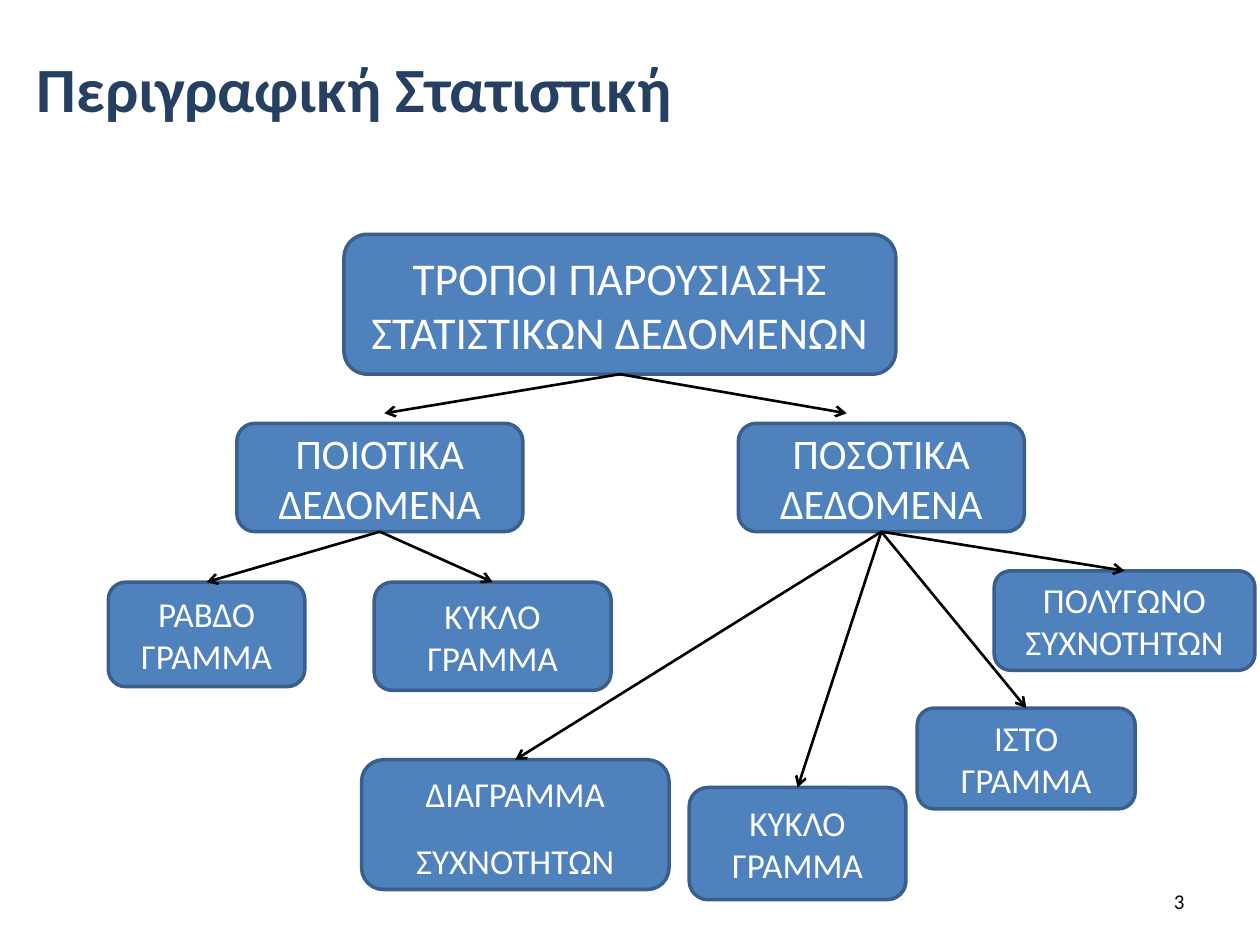
from lxml import etree
from pptx import Presentation
from pptx.dml.color import RGBColor
from pptx.enum.shapes import MSO_CONNECTOR, MSO_SHAPE
from pptx.enum.text import MSO_ANCHOR, MSO_AUTO_SIZE, PP_ALIGN
from pptx.oxml.ns import qn
from pptx.util import Inches, Pt

NODE = MSO_SHAPE.FLOWCHART_ALTERNATE_PROCESS
STRAIGHT = MSO_CONNECTOR.STRAIGHT
MIDDLE = MSO_ANCHOR.MIDDLE
FIXED = MSO_AUTO_SIZE.NONE
LEFT, CENTER, RIGHT = PP_ALIGN.LEFT, PP_ALIGN.CENTER, PP_ALIGN.RIGHT
TOP_SITE, BOTTOM_SITE = 0, 2
FONT = "Calibri"
COLORS = {"node": "4F81BD", "edge": "3A5F8C", "light": "FFFFFF", "dark": "000000", "title": "254061"}
COLUMNS, ROWS = 100, 75


def color(name):
    """Return the named palette colour."""
    return RGBColor.from_string(COLORS[name])


def write(box, text, size=20, ink="light", bold=False, align=CENTER, spacing=1.0, before=0, margin=0, indent=0):
    """Fill a shape with one formatted paragraph per line of text."""
    frame = box.text_frame
    frame.word_wrap = True
    frame.auto_size = FIXED
    frame.vertical_anchor = MIDDLE
    for index, line in enumerate(text.split("\n")):
        para = frame.add_paragraph() if index else frame.paragraphs[0]
        para.alignment = align
        para.line_spacing = spacing
        para.space_before = Pt(before)
        properties = para._p.get_or_add_pPr()
        properties.set("marL", str(Inches(margin)))
        properties.set("indent", str(Inches(indent)))
        etree.SubElement(properties, qn("a:buNone"))
        span = para.add_run()
        span.text = line
        span.font.name = FONT
        span.font.size = Pt(size)
        span.font.bold = bold
        span.font.color.rgb = color(ink)


class TreeSlide:
    """Hold the current page and draw a tree diagram on its grid."""

    def __init__(self, deck):
        """Add a title and content page to the deck."""
        self.deck = deck
        self.page = deck.slides.add_slide(deck.slide_layouts[1])

    def point(self, column, row):
        """Convert grid units to slide lengths."""
        return int(self.deck.slide_width * column / COLUMNS), int(self.deck.slide_height * row / ROWS)

    def place(self, box, area):
        """Move a shape to an area given in columns and rows."""
        box.left, box.top = self.point(*area[:2])
        box.width, box.height = self.point(*area[2:])

    def style(self, box):
        """Apply the node fill and outline."""
        box.fill.solid()
        box.fill.fore_color.rgb = color("node")
        box.line.color.rgb = color("edge")
        box.line.width = Pt(2)

    def title(self, text, area):
        """Fill the title placeholder."""
        box = self.page.shapes.title
        self.place(box, area)
        write(box, text, size=36, ink="title", bold=True, align=LEFT, margin=0.19)

    def node(self, text, area, size=20):
        """Add a rounded node."""
        box = self.page.shapes.add_shape(NODE, *self.point(*area[:2]), *self.point(*area[2:]))
        box.shadow.inherit = False
        self.style(box)
        write(box, text, size=size)
        return box

    def body_node(self, text, area):
        """Turn the body placeholder into a rounded node."""
        box = self.page.placeholders[1]
        self.place(box, area)
        outline = etree.SubElement(box._element.spPr, qn("a:prstGeom"), prst="flowChartAlternateProcess")
        etree.SubElement(outline, qn("a:avLst"))
        self.style(box)
        write(box, text, spacing=1.1, before=12, indent=-0.3)
        return box

    def arrow(self, parent, child=None, tip=(0, 0)):
        """Draw an arrow from a parent's foot to a child's top or a free tip."""
        end = self.point(*tip)
        line = self.page.shapes.add_connector(STRAIGHT, *end, *end)
        line.begin_connect(parent, BOTTOM_SITE)
        if child is not None:
            line.end_connect(child, TOP_SITE)
        line.line.color.rgb = color("dark")
        line.line.width = Pt(1.5)
        etree.SubElement(line.line._get_or_add_ln(), qn("a:tailEnd"), type="arrow")
        etree.SubElement(line._element.spPr, qn("a:effectLst"))

    def number(self, text, area):
        """Add the page number."""
        box = self.page.shapes.add_textbox(*self.point(*area[:2]), *self.point(*area[2:]))
        write(box, text, size=12, ink="dark", align=RIGHT)


def main():
    """Build and save the deck."""
    deck = Presentation()
    deck.slide_width, deck.slide_height = Inches(10), Inches(7.5)
    tree = TreeSlide(deck)
    tree.title("Περιγραφική Στατιστική", (0, 0, 100, 13.9))

    root = tree.node("ΤΡΟΠΟΙ ΠΑΡΟΥΣΙΑΣΗΣ ΣΤΑΤΙΣΤΙΚΩΝ ΔΕΔΟΜΕΝΩΝ", (27.3, 18.6, 43.8, 11.1), size=26)
    qualitative = tree.node("ΠΟΙΟΤΙΚΑ ΔΕΔΟΜΕΝΑ", (18.8, 33.6, 22.7, 8.6), size=24)
    quantitative = tree.node("ΠΟΣΟΤΙΚΑ ΔΕΔΟΜΕΝΑ", (58.6, 33.6, 22.7, 8.6), size=24)
    for column in (30.5, 67.2):
        tree.arrow(root, tip=(column, 32.8))

    frequency = tree.body_node("ΔΙΑΓΡΑΜΜΑ\nΣΥΧΝΟΤΗΤΩΝ", (28.7, 60.3, 24.4, 10.3))
    tree.arrow(quantitative, frequency)
    leaves = [
        (qualitative, "ΡΑΒΔΟ\nΓΡΑΜΜΑ", (8.6, 46.2, 15.6, 8.3)),
        (qualitative, "ΚΥΚΛΟ\nΓΡΑΜΜΑ", (29.7, 46.2, 18.8, 8.6)),
        (quantitative, "ΚΥΚΛΟ\nΓΡΑΜΜΑ", (54.7, 62.5, 17.2, 8.9)),
        (quantitative, "ΙΣΤΟ\nΓΡΑΜΜΑ", (72.8, 56.2, 17.3, 8)),
        (quantitative, "ΠΟΛΥΓΩΝΟ\nΣΥΧΝΟΤΗΤΩΝ", (78.9, 45.3, 20.7, 7.9)),
    ]
    for parent, text, area in leaves:
        tree.arrow(parent, tree.node(text, area))

    tree.number("3", (71.7, 69.5, 23.3, 4))
    deck.save("out.pptx")


if __name__ == "__main__":
    main()
